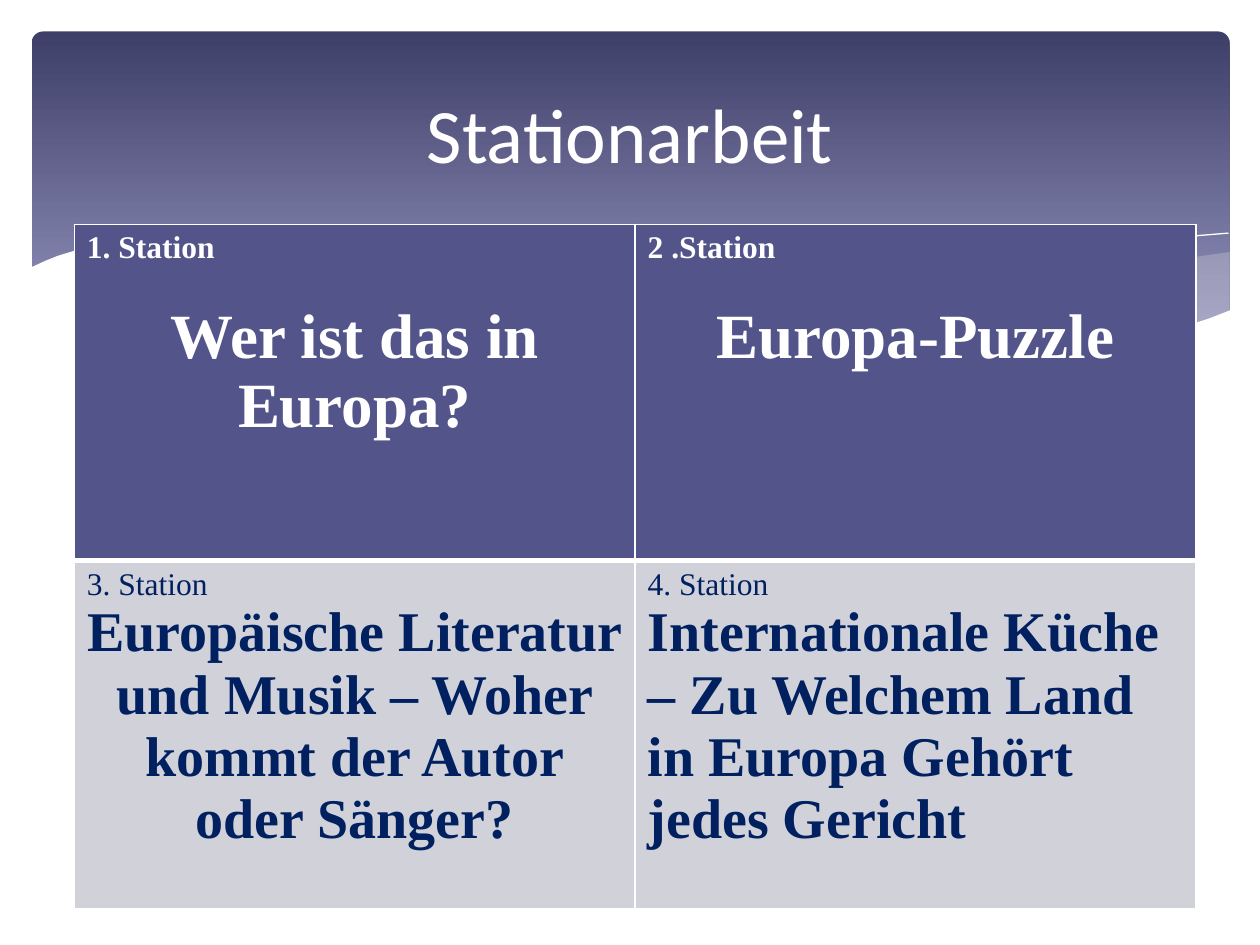
import pptx
import pptx.util
import pptx.dml.color
import pptx.enum.shapes
import pptx.enum.text
import pptx.oxml.ns
import lxml.etree

Inches, Pt = pptx.util.Inches, pptx.util.Pt
RGBColor = pptx.dml.color.RGBColor
ALIGN = pptx.enum.text.PP_ALIGN
qn = pptx.oxml.ns.qn

WHITE = RGBColor(0xFF, 0xFF, 0xFF)
NAVY = RGBColor(0x00, 0x20, 0x60)
PURPLE = RGBColor(0x53, 0x54, 0x8A)
PALE = RGBColor(0xD1, 0xD1, 0xDA)
MIST = RGBColor(0xDE, 0xDE, 0xDE)
DARK = RGBColor(0x3E, 0x3F, 0x68)
LIGHT = RGBColor(0x94, 0x93 + 1, 0xBE)
SERIF = "Times New Roman"

RIGHT = [(9.76, 2), (9.48, 2.04), (9.21, 2.1), (8.91, 2.16), (8.61, 2.23),
         (8.05, 2.37), (7.53, 2.48), (7.06, 2.57), (6.61, 2.65), (6.91, 2.69),
         (7.32, 2.74), (7.69, 2.77), (8.03, 2.78), (8.35, 2.77), (8.63, 2.75),
         (8.89, 2.72), (9.13, 2.67), (9.35, 2.62), (9.49, 2.57), (9.76, 2.47)]
MIDDLE = [(8.93, 2.73), (8.37, 2.65), (7.75, 2.54), (7.06, 2.4), (6.29, 2.22),
          (5.84, 2.11), (5.41, 2.03), (5.02, 1.96), (4.65, 1.91), (4.2, 1.87),
          (3.8, 1.85), (3.44, 1.86), (3.13, 1.88), (2.86, 1.91), (3.23, 1.96),
          (3.62, 2.03), (4.04, 2.11), (4.49, 2.22), (5.3, 2.4), (6.01, 2.55),
          (6.5, 2.64), (6.95, 2.7), (7.36, 2.75), (7.73, 2.77), (8.07, 2.78),
          (8.48, 2.77), (8.76, 2.75)]
FALL = [(3.09, 1.95), (3.28, 1.92), (3.53, 1.89), (3.87, 1.87), (4.33, 1.87),
        (4.89, 1.9), (5.33, 1.94), (5.82, 2), (6.36, 2.08), (6.95, 2.19),
        (7.6, 2.33), (8.31, 2.51), (9.07, 2.72)]
RISE = [(6.13, 2.57), (6.53, 2.46), (6.95, 2.35), (7.48, 2.23), (8.06, 2.1),
        (8.66, 1.99), (8.95, 1.94), (9.24, 1.9), (9.51, 1.87), (9.75, 1.85)]
FRONT = [(9.77, 2.46), (9.59, 2.53), (9.4, 2.59), (9.2, 2.65), (8.99, 2.69),
         (8.75, 2.73), (8.5, 2.75), (8.23, 2.77), (7.93, 2.76), (7.61, 2.75),
         (7.26, 2.72), (6.88, 2.68), (6.48, 2.62), (6.03, 2.54), (5.55, 2.45),
         (5.03, 2.33), (4.47, 2.2), (3.91, 2.07), (3.4, 1.97), (2.92, 1.9),
         (2.5, 1.86), (2.11, 1.84), (1.77, 1.84), (1.46, 1.85), (1.19, 1.87),
         (0.95, 1.91), (0.76, 1.95), (0.59, 1.99), (0.46, 2.03), (0.36, 2.07),
         (0.23, 2.13), (0.23, 3.29), (9.77, 3.29)]

CELLS = [
    [("1. Station", "Wer ist das in Europa?", ALIGN.CENTER),
     ("2 .Station", "Europa-Puzzle", ALIGN.CENTER)],
    [("3. Station", "Europäische Literatur und Musik – Woher kommt der Autor oder Sänger?",
      ALIGN.CENTER),
     ("4. Station", "Internationale Küche – Zu Welchem Land in Europa Gehört jedes Gericht",
      ALIGN.LEFT)],
]


def add_banner(slide):
    """Draw the rounded gradient banner."""
    kind = pptx.enum.shapes.MSO_SHAPE.ROUNDED_RECTANGLE
    banner = slide.shapes.add_shape(kind, Inches(0.25), Inches(0.25), Inches(9.51), Inches(2.7))
    banner.adjustments[0] = 0.034
    banner.shadow.inherit = False
    banner.line.fill.background()
    banner.fill.gradient()
    banner.fill.gradient_angle = 270
    for stop, color, place in zip(banner.fill.gradient_stops, (DARK, LIGHT), (0, 0.9)):
        stop.color.rgb = color
        stop.position = place


def add_path(slide, points, fill=None, alpha=100):
    """Draw a filled wave, or a thin white curve when there is no fill."""
    spots = [(Inches(x), Inches(y)) for x, y in points]
    pen = slide.shapes.build_freeform(*spots[0])
    pen.add_line_segments(spots[1:], close=fill is not None)
    wave = pen.convert_to_shape()
    wave.shadow.inherit = False
    if fill is None:
        wave.fill.background()
        wave.line.color.rgb = WHITE
        wave.line.width = 0
        return
    wave.line.fill.background()
    wave.fill.solid()
    wave.fill.fore_color.rgb = fill
    if alpha < 100:
        tone = wave.fill._xPr.find(".//" + qn("a:srgbClr"))
        lxml.etree.SubElement(tone, qn("a:alpha"), val=str(alpha * 1000))


def add_title(slide, text):
    """Place the title on top of the banner."""
    title = slide.shapes.title
    title.left, title.top = Inches(0.5), Inches(0.37)
    title.width, title.height = Inches(9), Inches(1.37)
    title.text_frame.vertical_anchor = pptx.enum.text.MSO_ANCHOR.MIDDLE
    para = title.text_frame.paragraphs[0]
    para.alignment = ALIGN.CENTER
    add_run(para, text, 44, WHITE, False, "Calibri")
    slide.shapes._spTree.append(title._element)


def add_run(para, text, size, color, bold, face=SERIF):
    """Add one formatted run to a paragraph."""
    run = para.add_run()
    run.text = text
    font = run.font
    font.name, font.size, font.bold = face, Pt(size), bold
    font.color.rgb = color


def set_edges(cell, widths):
    """Give a cell white borders in the order left, right, top, bottom."""
    props = cell._tc.get_or_add_tcPr()
    for side, width in zip("LRTB", widths):
        edge = lxml.etree.SubElement(props, qn("a:ln" + side), w=str(Pt(width)))
        paint = lxml.etree.SubElement(edge, qn("a:solidFill"))
        lxml.etree.SubElement(paint, qn("a:srgbClr"), val=str(WHITE))


def fill_cell(cell, label, task, align, head):
    """Write a station label and its task into a cell."""
    set_edges(cell, (1, 1, 1, 3) if head else (1, 1, 3, 1))
    cell.fill.solid()
    cell.fill.fore_color.rgb = PURPLE if head else PALE
    color = WHITE if head else NAVY
    frame = cell.text_frame
    add_run(frame.paragraphs[0], label, 18, color, head)
    para = frame.add_paragraph()
    para.alignment = align
    if head:
        para.space_before = Pt(21)
    add_run(para, task, 36 if head else 32, color, True)


def add_grid(slide):
    """Add the table of four stations."""
    table = slide.shapes.add_table(2, 2, Inches(0.59), Inches(1.78),
                                   Inches(8.9), Inches(5.43)).table
    table.horz_banding = False
    for row, height in zip(table.rows, (2.67, 2.76)):
        row.height = Inches(height)
    for r, line in enumerate(CELLS):
        for c, (label, task, align) in enumerate(line):
            fill_cell(table.cell(r, c), label, task, align, r == 0)


def main():
    """Build and save the slide."""
    deck = pptx.Presentation()
    deck.slide_width, deck.slide_height = Inches(10), Inches(7.5)
    slide = deck.slides.add_slide(deck.slide_layouts[5])
    add_banner(slide)
    add_path(slide, RIGHT, MIST, 29)
    add_path(slide, MIDDLE, MIST, 40)
    add_path(slide, FALL)
    add_path(slide, RISE)
    add_path(slide, FRONT, WHITE)
    add_grid(slide)
    add_title(slide, "Stationarbeit")
    deck.save("out.pptx")


if __name__ == "__main__":
    main()
